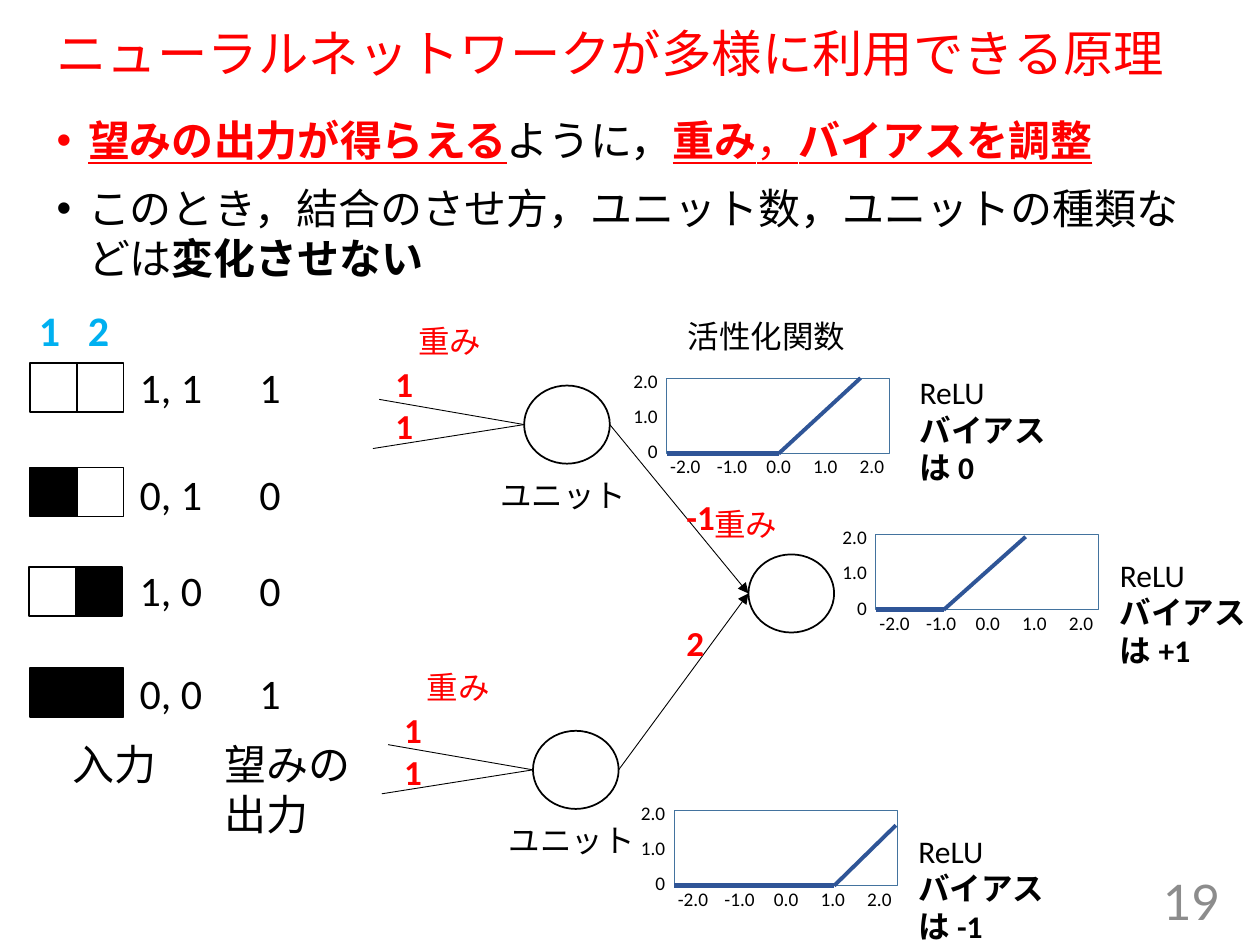
from dataclasses import dataclass
from typing import NamedTuple

from lxml import etree
from pptx import Presentation
from pptx import util as u
from pptx.dml.color import RGBColor
from pptx.enum import shapes, text
from pptx.oxml import ns


@dataclass(frozen=True)
class Theme:
    heading_font: str = "Lato"
    label_font: str = "Calibri"
    black: str = "000000"
    white: str = "FFFFFF"
    red: str = "FF0000"
    cyan: str = "00B0F0"
    grey: str = "8C8C8C"
    curve: str = "2F5597"
    frame: str = "43739E"
    title: float = 28.8
    page: float = 28
    body: float = 24
    weight: float = 20
    label: float = 18
    tick: float = 11


class Span(NamedTuple):
    words: str
    color: str
    bold: bool = False
    underline: bool = False


class Box(NamedTuple):
    left: float
    top: float
    width: float
    height: float


class Point(NamedTuple):
    x: float
    y: float


class Pattern(NamedTuple):
    left: float
    top: float
    label_top: float
    inputs: tuple[int, int]
    target: int


class Unit(NamedTuple):
    left: float
    top: float


class Activation(NamedTuple):
    left: float
    top: float
    bend: float
    end: Point
    bias: str
    caption: Point


THEME = Theme()
ALIGN = text.PP_ALIGN
UNIT_WIDTH, UNIT_HEIGHT = 0.68, 0.62
FRAME_WIDTH, FRAME_HEIGHT = 1.77, 0.6
CELL_WIDTH, CELL_HEIGHT = 0.37, 0.39

PATTERNS = [
    Pattern(0.24, 2.88, 2.82, (1, 1), 1),
    Pattern(0.24, 3.71, 3.67, (0, 1), 0),
    Pattern(0.23, 4.5, 4.43, (1, 0), 0),
    Pattern(0.24, 5.3, 5.25, (0, 0), 1),
]
HIDDEN_UNITS = [Unit(4.16, 3.06), Unit(4.23, 5.8)]
OUTPUT_UNIT = Unit(5.94, 4.4)
ACTIVATIONS = [
    Activation(5.29, 3, 0.89, Point(1.54, 0), "0", Point(7.2, 2.91)),
    Activation(5.35, 6.43, 1.27, Point(1.76, 0.12), "-1", Point(7.19, 6.55)),
    Activation(6.95, 4.24, 0.54, Point(1.19, 0.02), "+1", Point(8.79, 4.36)),
]


def place(box: Box) -> list[u.Length]:
    return [u.Inches(value) for value in box]


def add_spans(slide, box: Box, lines: list[list[Span]], size: float,
              font: str = THEME.label_font, align=ALIGN.LEFT,
              anchor=text.MSO_ANCHOR.TOP, wrap: bool = False, inset: bool = True):
    frame = slide.shapes.add_textbox(*place(box)).text_frame
    frame.word_wrap = wrap
    frame.vertical_anchor = anchor
    if not inset:
        frame.margin_left = frame.margin_right = u.Inches(0)
        frame.margin_top = frame.margin_bottom = u.Inches(0)
    for index, spans in enumerate(lines):
        paragraph = frame.add_paragraph() if index else frame.paragraphs[0]
        paragraph.alignment = align
        for span in spans:
            run = paragraph.add_run()
            run.text = span.words
            run.font.name = font
            run.font.size = u.Pt(size)
            run.font.bold = span.bold
            run.font.underline = span.underline
            run.font.color.rgb = RGBColor.from_string(span.color)
    return frame


def add_label(slide, box: Box, words: str, size: float,
              color: str = THEME.black, bold: bool = False, **layout):
    lines = [[Span(line, color, bold)] for line in words.split("\n")]
    return add_spans(slide, box, lines, size, **layout)


def add_outline(slide, kind, box: Box, line: str = THEME.black,
                width: float = 1, fill: str | None = None) -> None:
    shape = slide.shapes.add_shape(kind, *place(box))
    shape.shadow.inherit = False
    shape.line.color.rgb = RGBColor.from_string(line)
    shape.line.width = u.Pt(width)
    if fill:
        shape.fill.solid()
        shape.fill.fore_color.rgb = RGBColor.from_string(fill)
    else:
        shape.fill.background()


def add_line(slide, start: Point, end: Point, color: str = THEME.black,
             width: float = 0.5, arrow: bool = False) -> None:
    connector = slide.shapes.add_connector(
        shapes.MSO_CONNECTOR.STRAIGHT, *(u.Inches(value) for value in (*start, *end)))
    connector.line.color.rgb = RGBColor.from_string(color)
    connector.line.width = u.Pt(width)
    if arrow:
        outline = connector.line._get_or_add_ln()
        etree.SubElement(outline, ns.qn("a:tailEnd"), type="triangle")
    etree.SubElement(connector._element.spPr, ns.qn("a:effectLst"))


def add_bullets(frame) -> None:
    for paragraph in frame.paragraphs:
        paragraph.space_before = u.Pt(10)
        properties = paragraph._p.get_or_add_pPr()
        properties.set("marL", str(u.Inches(0.25)))
        properties.set("indent", str(u.Inches(-0.25)))
        etree.SubElement(properties, ns.qn("a:buFont"), typeface="Arial")
        etree.SubElement(properties, ns.qn("a:buChar"), char="•")


def draw_pattern(slide, pattern: Pattern) -> None:
    for column, value in enumerate(pattern.inputs):
        cell = Box(pattern.left + column * CELL_WIDTH, pattern.top, CELL_WIDTH, CELL_HEIGHT)
        add_outline(slide, shapes.MSO_SHAPE.RECTANGLE, cell,
                    fill=None if value else THEME.black)
    pair = ", ".join(str(value) for value in pattern.inputs)
    add_label(slide, Box(1.01, pattern.label_top, 0.7, 0.5), pair, THEME.body)
    add_label(slide, Box(1.96, pattern.label_top, 0.37, 0.5), str(pattern.target), THEME.body)


def draw_unit(slide, unit: Unit) -> None:
    add_outline(slide, shapes.MSO_SHAPE.OVAL, Box(*unit, UNIT_WIDTH, UNIT_HEIGHT))


def draw_hidden_unit(slide, unit: Unit) -> None:
    left, top = unit
    middle = top + UNIT_HEIGHT / 2
    draw_unit(slide, unit)
    for start in (Point(left - 1.15, top + 0.11), Point(left - 1.2, top + 0.5)):
        add_line(slide, start, Point(left, middle))
    add_line(slide, Point(left + UNIT_WIDTH, middle),
             Point(OUTPUT_UNIT.left, OUTPUT_UNIT.top + UNIT_HEIGHT / 2), arrow=True)
    add_label(slide, Box(left - 0.29, top + 0.67, 1.21, 0.4), "ユニット", THEME.label)
    add_label(slide, Box(left - 1.12, top - 0.23, 0.41, 1.08), "1\n1",
              THEME.weight, THEME.red, True)
    add_label(slide, Box(left - 0.94, top - 0.55, 0.71, 0.4), "重み", THEME.label, THEME.red)


def draw_activation(slide, activation: Activation) -> None:
    left, top = activation.left, activation.top
    add_outline(slide, shapes.MSO_SHAPE.RECTANGLE, Box(left, top, FRAME_WIDTH, FRAME_HEIGHT),
                THEME.frame, 0.5, THEME.white)
    tick = dict(anchor=text.MSO_ANCHOR.MIDDLE, wrap=True, inset=False)
    for row, value in enumerate(("2.0", "1.0", "0")):
        add_label(slide, Box(left - 0.37, top - 0.07 + row * 0.28, 0.3, 0.18),
                  value, THEME.tick, align=ALIGN.RIGHT, **tick)
    for column, value in enumerate(("-2.0", "-1.0", "0.0", "1.0", "2.0")):
        add_label(slide, Box(left - 0.03 + column * 0.37, top + 0.61, 0.36, 0.18),
                  value, THEME.tick, align=ALIGN.CENTER, **tick)
    bend = Point(left + activation.bend, top + FRAME_HEIGHT)
    end = Point(left + activation.end.x, top + activation.end.y)
    add_line(slide, Point(left, bend.y), bend, THEME.curve, 3)
    add_line(slide, bend, end, THEME.curve, 2.25)
    caption = [[Span("ReLU", THEME.black)], [Span("バイアス", THEME.black, True)],
               [Span(f"は {activation.bias}", THEME.black, True)]]
    add_spans(slide, Box(*activation.caption, 1.21, 1.01), caption, THEME.label)


def main() -> None:
    presentation = Presentation()
    presentation.slide_width, presentation.slide_height = u.Inches(10), u.Inches(7.5)
    slide = presentation.slides.add_slide(presentation.slide_layouts[6])

    heading = dict(font=THEME.heading_font, wrap=True)
    title = add_label(slide, Box(0.35, 0.19, 9.25, 0.51),
                      "ニューラルネットワークが多様に利用できる原理", THEME.title, THEME.red,
                      anchor=text.MSO_ANCHOR.MIDDLE, **heading)
    title.paragraphs[0].line_spacing = 0.9
    points = [
        [Span("望みの出力が得らえる", THEME.red, True, True), Span("ように，", THEME.black),
         Span("重み", THEME.red, True, True), Span("，", THEME.red, False, True),
         Span("バイアスを調整", THEME.red, True, True)],
        [Span("このとき，結合のさせ方，ユニット数，ユニットの種類などは", THEME.black),
         Span("変化させない", THEME.black, True)],
    ]
    add_bullets(add_spans(slide, Box(0.35, 0.86, 9.25, 1.5), points, THEME.body, **heading))
    add_label(slide, Box(7.53, 6.95, 2.25, 0.4), "19", THEME.page, THEME.grey,
              align=ALIGN.RIGHT, anchor=text.MSO_ANCHOR.MIDDLE, **heading)

    for column, number in enumerate("12"):
        add_label(slide, Box(0.21 + column * 0.39, 2.37, 0.37, 0.5), number,
                  THEME.body, THEME.cyan, True)
    for pattern in PATTERNS:
        draw_pattern(slide, pattern)
    add_label(slide, Box(0.48, 5.81, 0.88, 0.5), "入力", THEME.body)
    add_label(slide, Box(1.68, 5.81, 1.21, 0.91), "望みの\n出力", THEME.body)

    for unit in HIDDEN_UNITS:
        draw_hidden_unit(slide, unit)
    draw_unit(slide, OUTPUT_UNIT)
    add_label(slide, Box(5.36, 2.47, 1.46, 0.4), "活性化関数", THEME.label)
    for activation in ACTIVATIONS:
        draw_activation(slide, activation)
    add_label(slide, Box(5.57, 3.96, 0.71, 0.4), "重み", THEME.label, THEME.red)
    for top, weight in ((3.88, "-1"), (4.88, "2")):
        add_label(slide, Box(5.35, top, 0.43, 0.43), weight, THEME.weight, THEME.red, True)

    presentation.save("out.pptx")


if __name__ == "__main__":
    main()
